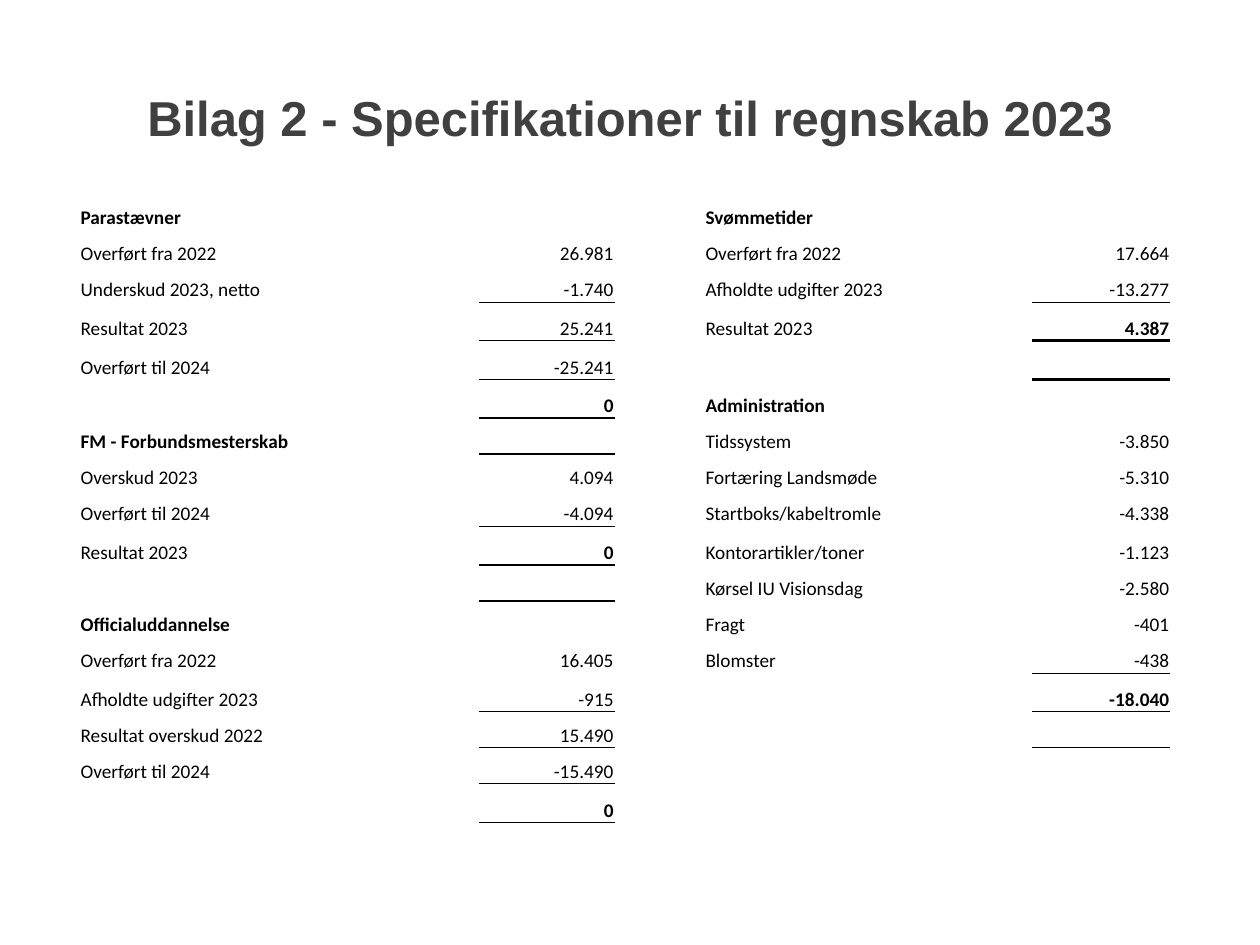
from dataclasses import dataclass

from lxml.etree import SubElement
from pptx import Presentation
from pptx.dml.color import RGBColor
from pptx.enum.text import MSO_ANCHOR, PP_ALIGN
from pptx.oxml.ns import qn
from pptx.util import Inches, Pt


@dataclass(frozen=True)
class Theme:
    """Colours, fonts and type sizes of the slide."""

    title_ink: str = "404040"
    ink: str = "000000"
    title_font: str = "Arial"
    body_font: str = "Calibri"
    title_size: int = 28
    body_size: int = 11
    plain_style: str = "{2D5ABB26-0587-4C30-8999-92F81FD0307C}"


GRID_UNIT = 0.05
SUM, TOTAL, FINAL = 0.5, 1, 2
COLUMNS = [63.4, 21.6, 14.2, 52, 22]
TALL_ROWS = {3, 4, 5, 9, 13, 16}
ROWS = [6.13 if row in TALL_ROWS else 5.73 for row in range(17)]

LEFT_LEDGER = [
    ("Parastævner", "", 0),
    ("Overført fra 2022", "26.981", 0),
    ("Underskud 2023, netto", "-1.740", SUM),
    ("Resultat 2023", "25.241", 0),
    ("Overført til 2024", "-25.241", SUM),
    ("", "0", TOTAL),
    ("FM - Forbundsmesterskab", "", 0),
    ("Overskud 2023", "4.094", 0),
    ("Overført til 2024", "-4.094", SUM),
    ("Resultat 2023", "0", TOTAL),
    ("", "", 0),
    ("Officialuddannelse", "", 0),
    ("Overført fra 2022", "16.405", 0),
    ("Afholdte udgifter 2023", "-915", SUM),
    ("Resultat overskud 2022", "15.490", 0),
    ("Overført til 2024", "-15.490", SUM),
    ("", "0", TOTAL),
]
RIGHT_LEDGER = [
    ("Svømmetider", "", 0),
    ("Overført fra 2022", "17.664", 0),
    ("Afholdte udgifter 2023", "-13.277", SUM),
    ("Resultat 2023", "4.387", FINAL),
    ("", "", 0),
    ("Administration", "", 0),
    ("Tidssystem", "-3.850", 0),
    ("Fortæring Landsmøde", "-5.310", 0),
    ("Startboks/kabeltromle", "-4.338", 0),
    ("Kontorartikler/toner", "-1.123", 0),
    ("Kørsel IU Visionsdag", "-2.580", 0),
    ("Fragt", "-401", 0),
    ("Blomster", "-438", SUM),
    ("", "-18.040", TOTAL),
]


def units(count):
    """Convert grid units to a length."""
    return Inches(count * GRID_UNIT)


def write_text(frame, text, *, font, size, color, bold=False, align=PP_ALIGN.LEFT):
    """Put one formatted paragraph in a text frame."""
    paragraph = frame.paragraphs[0]
    paragraph.alignment = align
    if not text:
        paragraph._p.get_or_add_endParaRPr().set("sz", str(size * 100))
        return
    run = paragraph.add_run()
    run.text = text
    run.font.name = font
    run.font.size = Pt(size)
    run.font.bold = bold
    run.font.color.rgb = RGBColor.from_string(color)


class SlideBuilder:
    """Holds the theme and the current slide."""

    def __init__(self, slide, theme):
        """Keep the slide and its theme."""
        self.slide = slide
        self.theme = theme

    def title(self, text, left, top, width, height):
        """Place and format the title."""
        heading = self.slide.shapes.title
        heading.left, heading.top = units(left), units(top)
        heading.width, heading.height = units(width), units(height)
        heading.text_frame.vertical_anchor = MSO_ANCHOR.MIDDLE
        write_text(heading.text_frame, text, font=self.theme.title_font,
                   size=self.theme.title_size, color=self.theme.title_ink,
                   bold=True, align=PP_ALIGN.CENTER)

    def table(self, left, top, columns, rows):
        """Add an unstyled table with the given column and row sizes."""
        table = self.slide.shapes.add_table(
            len(rows), len(columns), units(left), units(top),
            units(sum(columns)), units(sum(rows))).table
        table.first_row = table.horz_banding = False
        table._tbl.tblPr.find(qn("a:tableStyleId")).text = self.theme.plain_style
        for column, width in zip(table.columns, columns):
            column.width = units(width)
        for row, height in zip(table.rows, rows):
            row.height = units(height)
        return table

    def rule(self, cell, edge, weight):
        """Draw one border of a cell."""
        line = SubElement(cell._tc.get_or_add_tcPr(), qn(f"a:{edge}"), w=str(Pt(weight)))
        fill = SubElement(line, qn("a:solidFill"))
        SubElement(fill, qn("a:srgbClr"), val=self.theme.ink)

    def cell(self, cell, text, *, above=0, below=0, **style):
        """Fill one table cell with text and its rules."""
        cell.margin_left = cell.margin_right = cell.margin_top = Inches(0.01)
        cell.margin_bottom = 0
        cell.vertical_anchor = MSO_ANCHOR.BOTTOM
        for edge, weight in (("lnT", above), ("lnB", below)):
            if weight:
                self.rule(cell, edge, weight)
        cell.fill.background()
        write_text(cell.text_frame, text, font=self.theme.body_font,
                   size=self.theme.body_size, color=self.theme.ink, **style)

    def ledger(self, table, first_column, entries):
        """Write labels and amounts into two neighbouring columns."""
        padding = [("", "", 0)] * (len(table.rows) - len(entries))
        above = 0
        for row, (label, amount, below) in enumerate(entries + padding):
            self.cell(table.cell(row, first_column), label, bold=not amount)
            self.cell(table.cell(row, first_column + 1), amount, above=above,
                      below=below, bold=below >= TOTAL, align=PP_ALIGN.RIGHT)
            above = below

    def gutter(self, table, column):
        """Clear the column between two ledgers."""
        for row in range(len(table.rows)):
            self.cell(table.cell(row, column), "")


def main():
    """Build and save the presentation."""
    deck = Presentation()
    deck.slide_width, deck.slide_height = Inches(10), Inches(7.5)
    builder = SlideBuilder(deck.slides.add_slide(deck.slide_layouts[5]), Theme())
    builder.title("Bilag 2 - Specifikationer til regnskab 2023", 10, 6, 180, 25)
    accounts = builder.table(12.6, 30.8, COLUMNS, ROWS)
    builder.ledger(accounts, 0, LEFT_LEDGER)
    builder.gutter(accounts, 2)
    builder.ledger(accounts, 3, RIGHT_LEDGER)
    deck.save("out.pptx")


if __name__ == "__main__":
    main()
